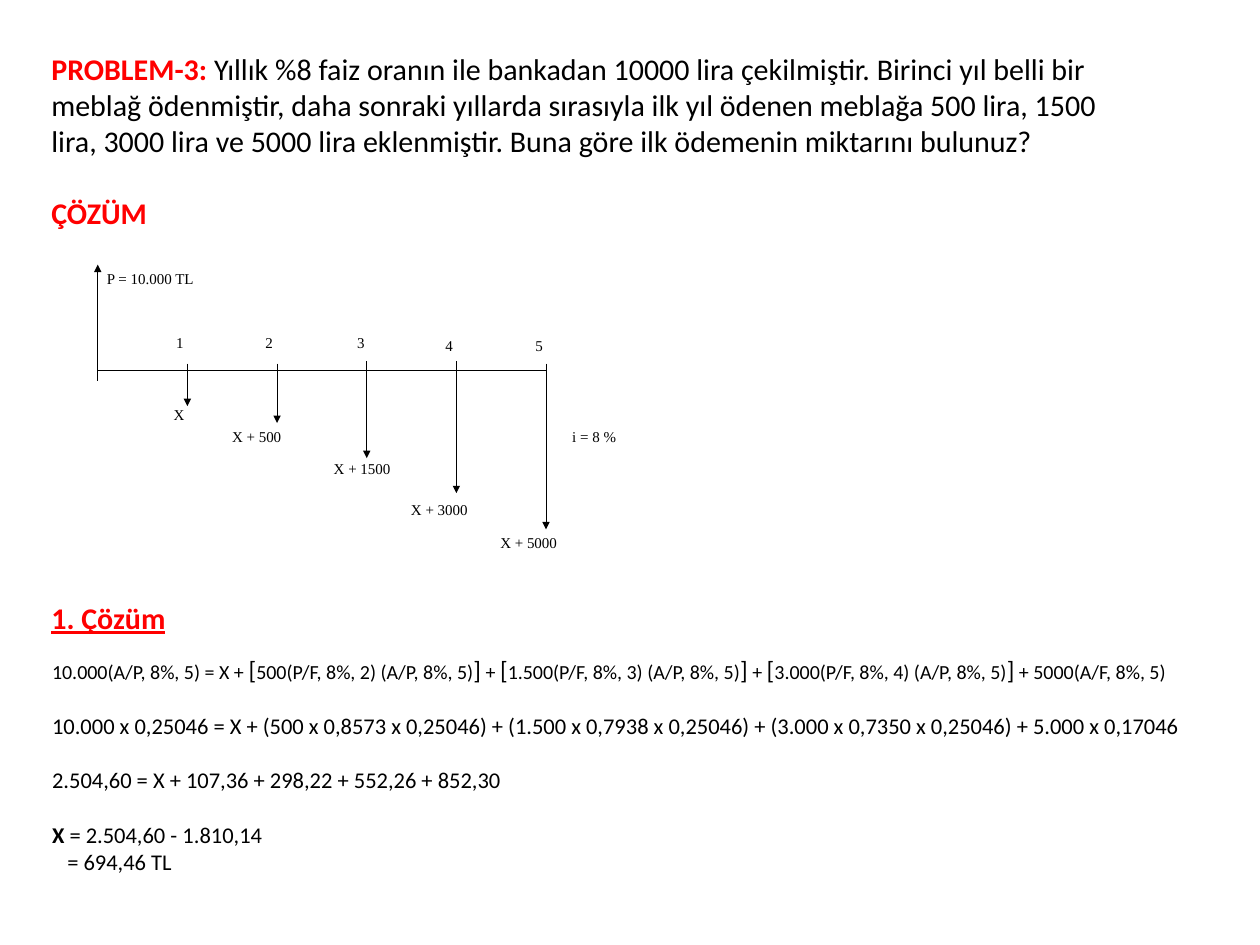
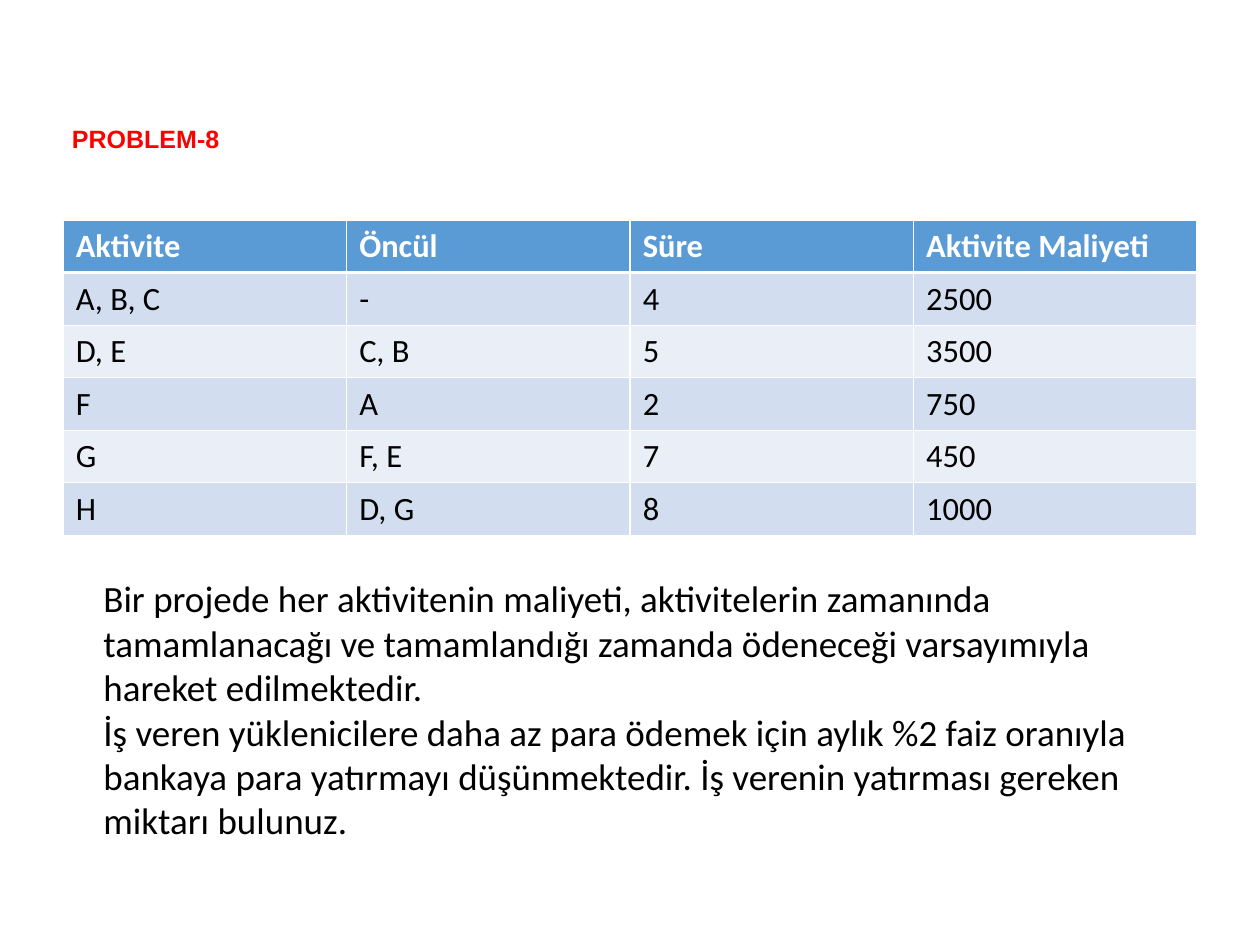
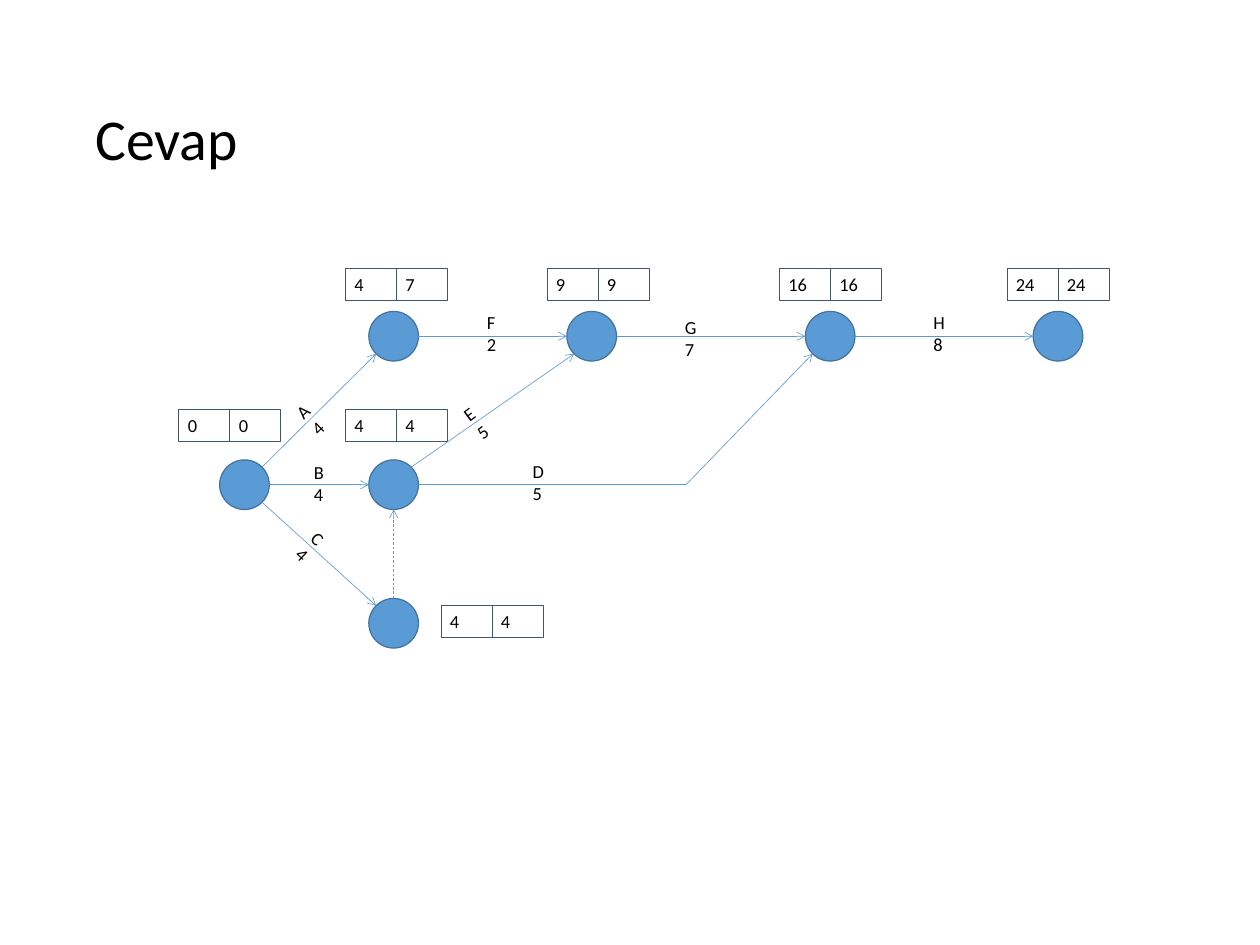
import math

import pptx
import pptx.dml.color
import pptx.enum.dml
import pptx.enum.shapes
import pptx.enum.text
import pptx.oxml
import pptx.oxml.ns
import pptx.util

Cm = pptx.util.Cm
Pt = pptx.util.Pt
RGBColor = pptx.dml.color.RGBColor
SHAPES = pptx.enum.shapes.MSO_SHAPE
ANCHOR = pptx.enum.text.MSO_ANCHOR

BLACK = RGBColor(0, 0, 0)
WHITE = RGBColor(255, 255, 255)
RED = RGBColor(255, 0, 0)
BLUE = RGBColor(0x5B, 0x9B, 0xD5)
BLUE_EDGE = RGBColor(0x43, 0x73, 0x9E)
SLATE = RGBColor(0x44, 0x54, 0x6A)
BAND_DARK = RGBColor(0xD2, 0xDE, 0xEF)
BAND_LIGHT = RGBColor(0xEA, 0xEF, 0xF7)

RADIUS = 0.7
DIAGONAL = math.sqrt(0.5)
COMPASS = {
    "N": (0, -1), "E": (1, 0), "S": (0, 1), "W": (-1, 0),
    "NE": (DIAGONAL, -DIAGONAL), "SE": (DIAGONAL, DIAGONAL),
    "SW": (-DIAGONAL, DIAGONAL), "NW": (-DIAGONAL, -DIAGONAL),
}


def add_xml(parent, tag, **attributes):
    child = parent.makeelement(pptx.oxml.ns.qn(tag), attributes)
    parent.append(child)
    return child


def set_font(font, size=None, color=None, bold=None, underline=None, name=None):
    """Set only the properties that are given."""
    if size:
        font.size = Pt(size)
    if color is not None:
        font.color.rgb = color
    if bold is not None:
        font.bold = bold
    if underline is not None:
        font.underline = underline
    if name:
        font.name = name


def set_borders(cell, top, bottom):
    properties = cell._tc.get_or_add_tcPr()
    widths = (("a:lnL", 1), ("a:lnR", 1), ("a:lnT", top), ("a:lnB", bottom))
    for position, (tag, width) in enumerate(widths):
        border = add_xml(properties, tag, w=str(Pt(width)))
        add_xml(add_xml(border, "a:solidFill"), "a:srgbClr", val=str(WHITE))
        properties.insert(position, border)


class Slides:
    """Holds the deck, its default text style and the current slide."""

    font_name = "Calibri"

    def __init__(self, width, height):
        self.deck = pptx.Presentation()
        self.deck.slide_width = Cm(width)
        self.deck.slide_height = Cm(height)
        self.page = None

    def new_page(self):
        self.page = self.deck.slides.add_slide(self.deck.slide_layouts[6])

    def fill_text(self, frame, paragraphs, gap=0, **style):
        """Fill a frame; a paragraph is a string or a list of (text, changes)."""
        style = {"name": self.font_name, "color": BLACK, **style}
        frame.word_wrap = True
        for index, spans in enumerate(paragraphs):
            para = frame.add_paragraph() if index else frame.paragraphs[0]
            para.alignment = pptx.enum.text.PP_ALIGN.LEFT
            if index and gap:
                para.space_before = Pt(gap)
            set_font(para.font, **style)
            if isinstance(spans, str):
                spans = [(spans, {})]
            for text, changes in spans:
                span = para.add_run()
                span.text = text
                set_font(span.font, **changes)

    def text(self, left, top, width, height, paragraphs, rotation=0, **style):
        box = self.page.shapes.add_textbox(Cm(left), Cm(top), Cm(width), Cm(height))
        box.rotation = rotation
        self.fill_text(box.text_frame, paragraphs, **style)
        return box.text_frame

    def title(self, left, top, text, **style):
        frame = self.text(left, top, 30.66, 5.16, [text], **style)
        frame.vertical_anchor = ANCHOR.MIDDLE
        frame.paragraphs[0].line_spacing = 0.9

    def shape(self, kind, left, top, width, height, edge, edge_width, fill=None):
        shape = self.page.shapes.add_shape(kind, Cm(left), Cm(top), Cm(width), Cm(height))
        shape.shadow.inherit = False
        if fill is None:
            shape.fill.background()
        else:
            shape.fill.solid()
            shape.fill.fore_color.rgb = fill
        shape.line.color.rgb = edge
        shape.line.width = Pt(edge_width)
        return shape

    def line(self, start, end, color=BLACK, width=0.75, head=None, dashed=False):
        connector = self.page.shapes.add_connector(
            pptx.enum.shapes.MSO_CONNECTOR.STRAIGHT,
            *(Cm(length) for length in (*start, *end)))
        connector.line.color.rgb = color
        connector.line.width = Pt(width)
        if dashed:
            connector.line.dash_style = pptx.enum.dml.MSO_LINE.DASH
        if head:
            add_xml(connector.line._get_or_add_ln(), "a:tailEnd", type=head)
        add_xml(connector._element.spPr, "a:effectLst")

    def table(self, left, top, column_width, row_height, rows, size):
        columns = len(rows[0])
        table = self.page.shapes.add_table(
            len(rows), columns, Cm(left), Cm(top),
            Cm(column_width * columns), Cm(row_height * len(rows))).table
        for row, values in enumerate(rows):
            table.rows[row].height = Cm(row_height)
            for column, value in enumerate(values):
                cell = table.cell(row, column)
                cell.margin_left = cell.margin_right = Cm(0.36)
                cell.margin_top = cell.margin_bottom = Cm(0.18)
                cell.fill.solid()
                header = row == 0
                band = BAND_DARK if row % 2 else BAND_LIGHT
                cell.fill.fore_color.rgb = BLUE if header else band
                set_borders(cell, 3 if row == 1 else 1, 3 if header else 1)
                self.fill_text(cell.text_frame, [value], size=size, bold=header,
                               color=WHITE if header else BLACK)


def draw_cash_flow(slides):
    axis, start, step = 10.46, 2.76, 2.53
    flow_text = {"name": "Times New Roman", "size": 12}
    # tick top, arrow end, year label (left, top), payment, payment label (left, top)
    years = [
        (10.26, 11.46, (4.72, 9.3), "X", (4.65, 11.33)),
        (10.26, 11.94, (7.24, 9.3), "X + 500", (6.3, 11.94)),
        (10.19, 12.93, (9.83, 9.3), "X + 1500", (9.17, 12.85)),
        (10.19, 13.92, (12.32, 9.37), "X + 3000", (11.35, 14)),
        (10.26, 14.94, (14.86, 9.37), "X + 5000", (13.87, 14.94)),
    ]
    slides.line((start, axis), (start + step * len(years), axis))
    slides.line((start, 10.26), (start, 10.74))
    slides.line((start, axis), (start, 7.47), head="triangle")
    for year, (tick, tip, year_spot, payment, payment_spot) in enumerate(years, 1):
        x = start + step * year
        slides.line((x, tick), (x, tick + 0.5))
        slides.line((x, axis), (x, tip), head="triangle")
        slides.text(*year_spot, 1.05, 1.3, [str(year)], **flow_text)
        slides.text(*payment_spot, 3.38, 1.3, [payment], **flow_text)
    slides.text(2.77, 7.47, 5.56, 1.3, ["P = 10.000 TL"], **flow_text)
    slides.text(15.9, 11.94, 4.04, 1.3, ["i = 8 %"], **flow_text)


def build_payment_problem(slides):
    slides.new_page()
    red_bold = {"color": RED, "bold": True}
    question = (
        "Yıllık %8 faiz oranın ile bankadan 10000 lira çekilmiştir. Birinci yıl belli "
        "bir meblağ ödenmiştir, daha sonraki yıllarda sırasıyla ilk yıl ödenen meblağa "
        "500 lira, 1500 lira, 3000 lira ve 5000 lira eklenmiştir. Buna göre ilk "
        "ödemenin miktarını bulunuz?")
    slides.text(1.2, 1.3, 31.04, 5.38, [
        [("PROBLEM-3: ", red_bold), (question, {})],
        [("ÇÖZÜM", red_bold)],
    ], size=24, gap=29)

    small, bracket = {"size": 16}, {"size": 20}
    formula = [("10.000(A/P, 8%, 5) = X + ", small)]
    for amount, year in (("500", 2), ("1.500", 3), ("3.000", 4)):
        formula += [("[", bracket),
                    (f"{amount}(P/F, 8%, {year}) (A/P, 8%, 5)", small),
                    ("]", bracket), (" + ", small)]
    formula.append(("5000(A/F, 8%, 5)", small))
    solution = slides.text(1.22, 18.34, 33.58, 7.39, [
        formula,
        "10.000 x 0,25046 = X + (500 x 0,8573 x 0,25046) + (1.500 x 0,7938 x 0,25046)"
        " + (3.000 x 0,7350 x 0,25046) + 5.000 x 0,17046",
        "2.504,60 = X + 107,36 + 298,22 + 552,26 + 852,30",
        [("X ", {"bold": True}), ("= 2.504,60 - 1.810,14", {})],
        "= 694,46 TL",
    ], size=18, gap=22)
    result = solution.paragraphs[-1]
    result.space_before = Pt(0)
    result._p.get_or_add_pPr().set("marL", str(Cm(0.43)))

    slides.text(1.2, 16.79, 31.04, 1.27, ["1. Çözüm"], size=24, underline=True, **red_bold)
    draw_cash_flow(slides)


def build_activity_problem(slides):
    slides.new_page()
    slides.title(1.78, 1.37, "PROBLEM-8", name="Arial", size=20, color=RED, bold=True)
    slides.table(1.78, 6.22, 8, 1.48, [
        ("Aktivite", "Öncül", "Süre", "Aktivite Maliyeti"),
        ("A, B, C", "-", "4", "2500"),
        ("D, E", "C, B", "5", "3500"),
        ("F", "A", "2", "750"),
        ("G", "F, E", "7", "450"),
        ("H", "D, G", "8", "1000"),
    ], size=26)
    slides.text(2.67, 16.13, 30.53, 7.85, [
        "Bir projede her aktivitenin maliyeti, aktivitelerin zamanında tamamlanacağı ve "
        "tamamlandığı zamanda ödeneceği varsayımıyla hareket edilmektedir.",
        "İş veren yüklenicilere daha az para ödemek için aylık %2 faiz oranıyla bankaya "
        "para yatırmayı düşünmektedir. İş verenin yatırması gereken miktarı bulunuz.",
    ], size=29.6)


def build_network_answer(slides):
    slides.new_page()
    slides.title(2.44, 1.42, "Cevap", size=46.2)

    upper, middle, lower = 9.49, 13.68, 17.59
    # centre, top left of the time boxes, earliest and latest time
    nodes = {
        "start": ((6.9, middle), (5.05, 11.56), ("0", "0")),
        "after A": ((11.11, upper), (9.75, 7.59), ("4", "7")),
        "after B": ((11.11, middle), (9.75, 11.56), ("4", "4")),
        "after C": ((11.11, lower), (12.45, 17.09), ("4", "4")),
        "after E": ((16.7, upper), (15.44, 7.59), ("9", "9")),
        "after G": ((23.43, upper), (22, 7.59), ("16", "16")),
        "finish": ((29.86, upper), (28.42, 7.59), ("24", "24")),
    }
    label_size, time_width, time_height = 14.7, 1.44, 0.89
    for (x, y), (left, top), times in nodes.values():
        slides.shape(SHAPES.OVAL, x - RADIUS, y - RADIUS, 2 * RADIUS, 2 * RADIUS,
                     BLUE_EDGE, 1, BLUE)
        for index, time in enumerate(times):
            box = slides.shape(SHAPES.RECTANGLE, left + index * time_width, top,
                               time_width, time_height, SLATE, 0.75)
            box.text_frame.vertical_anchor = ANCHOR.TOP
            slides.fill_text(box.text_frame, [time], size=label_size)

    def rim(node, direction):
        (x, y), (dx, dy) = nodes[node][0], COMPASS[direction]
        return x + RADIUS * dx, y + RADIUS * dy

    link = {"color": BLUE, "width": 0.5}
    for source, leaving, target, entering in (
        ("start", "NE", "after A", "SW"),
        ("start", "E", "after B", "W"),
        ("start", "SE", "after C", "NW"),
        ("after A", "E", "after E", "W"),
        ("after E", "E", "after G", "W"),
        ("after G", "E", "finish", "W"),
        ("after B", "NE", "after E", "SW"),
    ):
        slides.line(rim(source, leaving), rim(target, entering), head="arrow", **link)
    slides.line(rim("after C", "N"), rim("after B", "S"), head="arrow", dashed=True, **link)
    bend = (19.36, middle)
    slides.line(rim("after B", "E"), bend, **link)
    slides.line(bend, rim("after G", "SW"), head="arrow", **link)

    for activity, duration, left, top, rotation in (
        ("A", "4", 8.2, 10.69, 316), ("B", "4", 8.61, 12.88, 0),
        ("C", "4", 8.2, 15.09, 43.3), ("D", "5", 14.78, 12.85, 0),
        ("E", "5", 12.93, 10.82, 323.3), ("F", "2", 13.49, 8.66, 0),
        ("G", "7", 19.08, 8.79, 0), ("H", "8", 26.09, 8.66, 0),
    ):
        slides.text(left, top, 1.96, 1.52, [activity, duration], rotation, size=label_size)


def main():
    slides = Slides(35.56, 26.67)
    build_payment_problem(slides)
    build_activity_problem(slides)
    build_network_answer(slides)
    slides.deck.save("out.pptx")


if __name__ == "__main__":
    main()
